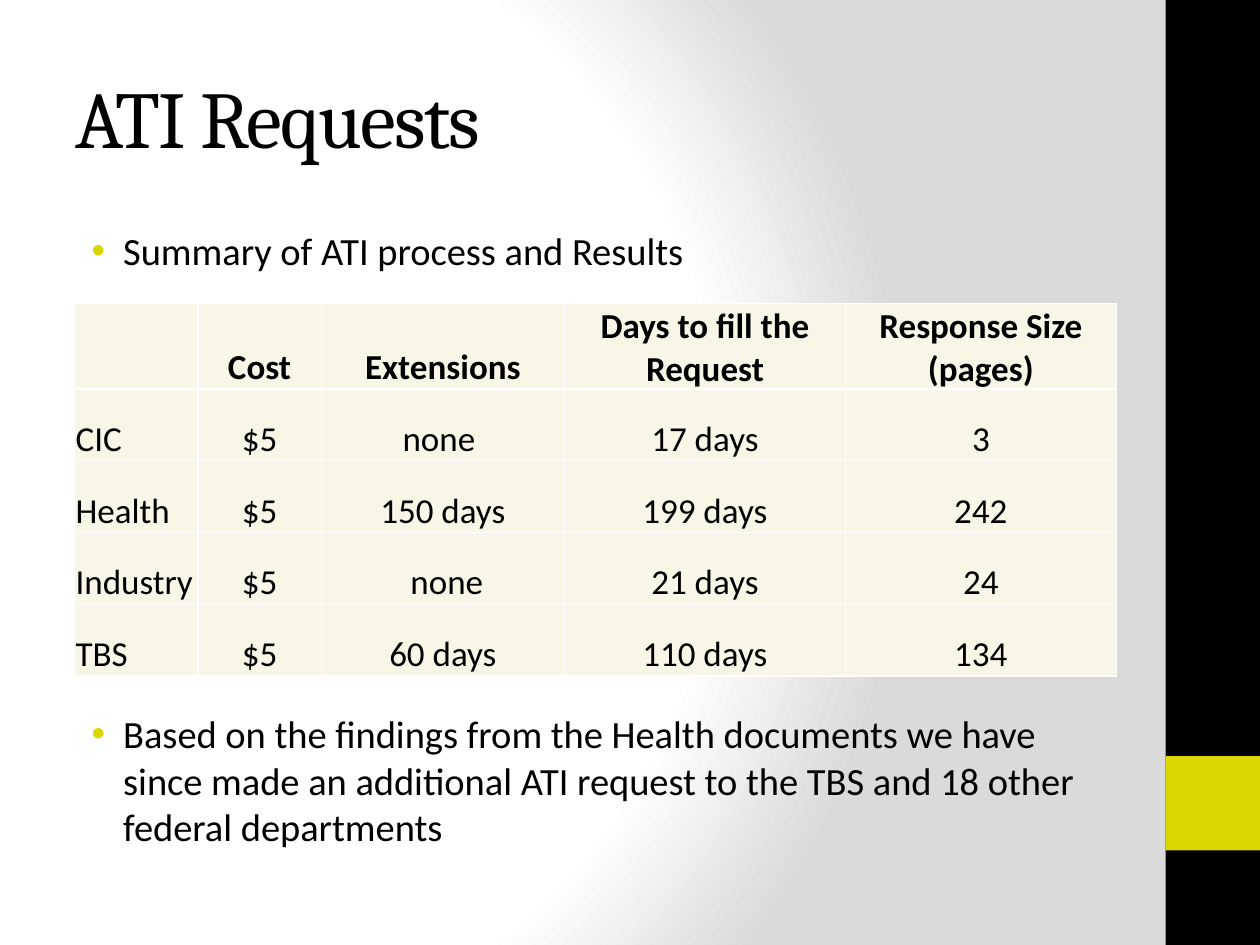
from pptx import Presentation
from pptx.dml.color import RGBColor
from pptx.enum.shapes import MSO_SHAPE
from pptx.enum.text import MSO_ANCHOR, PP_ALIGN
from pptx.oxml import parse_xml
from pptx.oxml.ns import nsdecls
from pptx.util import Inches, Pt


def color(code):
    return RGBColor.from_string(code)


def nodes(text):
    return list(parse_xml(f"<a:root {nsdecls('a')}>{text}</a:root>"))


def paint(code):
    return f'<a:srgbClr val="{code}"/>'


class Deck:
    ink = "000000"
    lime = "DBD600"
    cream = "F8F7E7"
    rule = "FFFFFF"
    head = "Cambria"
    body = "Calibri"

    def __init__(self, wide, high):
        self.show = Presentation()
        self.show.slide_width = Inches(wide)
        self.show.slide_height = Inches(high)
        self.slide = self.show.slides.add_slide(self.show.slide_layouts[6])

    def glow(self, stops):
        self.slide.background.fill.solid()
        marks = "".join(
            f'<a:gs pos="{spot * 1000}">{paint(code)}</a:gs>'
            for spot, code in stops)
        props = self.slide._element.cSld.bg.bgPr
        props[:1] = nodes(
            f'<a:gradFill rotWithShape="1"><a:gsLst>{marks}</a:gsLst>'
            '<a:path path="circle"><a:fillToRect l="20000" t="50000" '
            'r="100000" b="50000"/></a:path></a:gradFill>')

    def block(self, area, code):
        shape = self.slide.shapes.add_shape(
            MSO_SHAPE.RECTANGLE, *map(Inches, area))
        shape.shadow.inherit = False
        shape.fill.solid()
        shape.fill.fore_color.rgb = color(code)
        shape.line.fill.background()

    def frame(self, area):
        frame = self.slide.shapes.add_textbox(*map(Inches, area)).text_frame
        frame.word_wrap = True
        return frame

    def label(self, para, text, size, name, bold=False):
        para.text = text
        font = para.font
        font.size, font.name, font.bold = Pt(size), name, bold
        font.color.rgb = color(self.ink)

    def title(self, area, text):
        frame = self.frame(area)
        frame.vertical_anchor = MSO_ANCHOR.MIDDLE
        para = frame.paragraphs[0]
        self.label(para, text, 46, self.head)
        para.runs[0].font._element.set("spc", "-100")

    def points(self, area, items, gap):
        frame = self.frame(area)
        for i, text in enumerate(items):
            para = frame.add_paragraph() if i else frame.paragraphs[0]
            self.label(para, text, 22, self.body)
            para.space_before = Pt(gap if i else 0)
            props = para._p.get_or_add_pPr()
            props.set("marL", str(Inches(0.38)))
            props.set("indent", str(Inches(-0.25)))
            spot = props.index(props.find("{*}spcBef")) + 1
            props[spot:spot] = nodes(
                f'<a:buClr>{paint(self.lime)}</a:buClr>'
                '<a:buFont typeface="Arial"/><a:buChar char="•"/>')

    def cell(self, cell, text, bold, left):
        cell.margin_left = cell.margin_right = cell.margin_top = Inches(0.01)
        cell.margin_bottom = 0
        cell.vertical_anchor = MSO_ANCHOR.BOTTOM
        cell.fill.solid()
        cell.fill.fore_color.rgb = color(self.cream)
        para = cell.text_frame.paragraphs[0]
        self.label(para, text, 20, self.body, bold)
        para.alignment = PP_ALIGN.LEFT if left else PP_ALIGN.CENTER
        cell._tc.get_or_add_tcPr()[:0] = nodes("".join(
            f'<a:ln{side} w="{Pt(1)}"><a:solidFill>{paint(self.rule)}'
            f'</a:solidFill></a:ln{side}>' for side in "LRTB"))

    def table(self, left, top, wides, high, rows):
        grid = self.slide.shapes.add_table(
            len(rows), len(wides), Inches(left), Inches(top),
            Inches(sum(wides)), Inches(high * len(rows))).table
        for col, wide in zip(grid.columns, wides):
            col.width = Inches(wide)
        for r, row in enumerate(rows):
            grid.rows[r].height = Inches(high)
            for c, text in enumerate(row):
                self.cell(grid.cell(r, c), text, r == 0, c == 0)


def main():
    deck = Deck(10, 7.5)
    deck.glow([(0, "FFFFFF"), (75, "FFFFFF"), (100, "DADADA")])
    deck.block((9.25, 0, 0.75, 7.5), deck.ink)
    deck.block((9.25, 6, 0.75, 0.75), deck.lime)
    deck.title((0.5, 0.3, 8.33, 1.25), "ATI Requests")
    deck.points((0.5, 1.75, 8.33, 5.25), [
        "Summary of ATI process and Results",
        "Based on the findings from the Health documents we have since made "
        "an additional ATI request to the TBS and 18 other federal departments",
    ], 250)
    deck.table(0.59, 2.41, [0.98, 0.98, 1.93, 2.23, 2.15], 0.57, [
        ["", "Cost", "Extensions", "Days to fill the Request",
         "Response Size (pages)"],
        ["CIC", "$5", "none ", "17 days", "3"],
        ["Health", "$5", "150 days", "199 days", "242"],
        ["Industry", "$5", " none", "21 days", "24"],
        ["TBS", "$5", "60 days", "110 days", "134"],
    ])
    deck.show.save("out.pptx")


if __name__ == "__main__":
    main()
